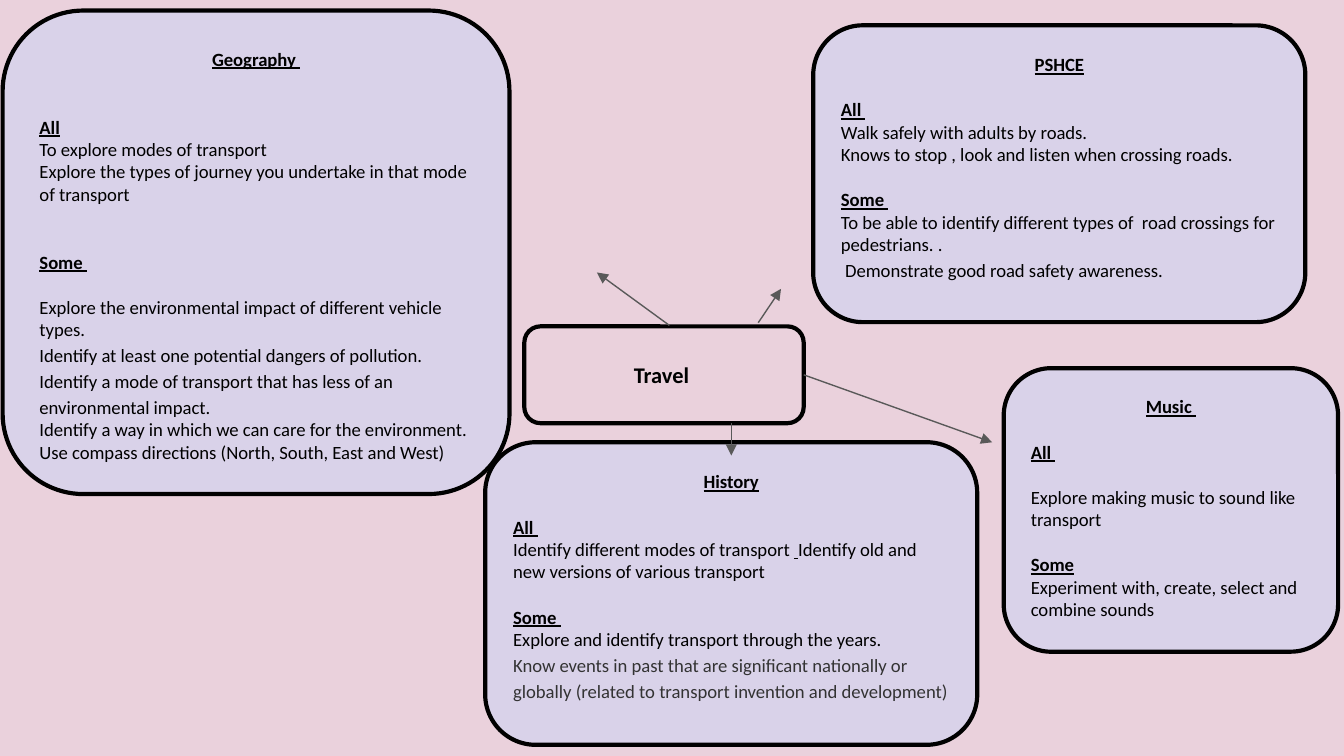
from lxml.etree import SubElement
from pptx import Presentation
from pptx.dml.color import RGBColor
from pptx.enum.shapes import MSO_CONNECTOR, MSO_SHAPE
from pptx.enum.text import MSO_ANCHOR, PP_ALIGN
from pptx.oxml.ns import qn
from pptx.util import Cm, Pt

PINK = RGBColor(0xEA, 0xD1, 0xDC)
LILAC = RGBColor(0xD9, 0xD2, 0xE9)
BLACK = RGBColor(0, 0, 0)
CHARCOAL = RGBColor(0x33, 0x33, 0x33)
GREY = RGBColor(0x59, 0x59, 0x59)
BLANK_LINE = 12.2


def add_box(page, place, fill):
    box = page.shapes.add_shape(MSO_SHAPE.ROUNDED_RECTANGLE, *map(Cm, place))
    box.adjustments[0] = 0.167
    box.shadow.inherit = False
    box.fill.solid()
    box.fill.fore_color.rgb = fill
    box.line.color.rgb = BLACK
    box.line.width = Pt(2.25)
    frame = box.text_frame
    frame.word_wrap = True
    frame.vertical_anchor = MSO_ANCHOR.TOP
    frame.margin_left = frame.margin_right = Cm(0.25)
    frame.margin_top = frame.margin_bottom = Cm(0.25)
    return box


def add_span(para, text, size=10, bold=False, underline=False, color=BLACK):
    span = para.add_run()
    span.text = text
    span.font.name = "Calibri"
    span.font.size = Pt(size)
    span.font.bold = bold
    span.font.underline = underline
    span.font.color.rgb = color


def add_para(box, gap=0, spacing=1.0):
    para = box.text_frame.add_paragraph()
    para.alignment = PP_ALIGN.LEFT
    para.space_before = Pt(gap * BLANK_LINE)
    para.line_spacing = spacing
    return para


def add_heading(box, text, gap=1):
    add_span(add_para(box, gap), text, bold=True, underline=True)


def add_lines(box, *lines, gap=0, spacing=1.0, color=BLACK):
    for index, text in enumerate(lines):
        para = add_para(box, 0 if index else gap, spacing)
        add_span(para, text, color=color)


def add_subject(page, name, place):
    box = add_box(page, place, LILAC)
    para = box.text_frame.paragraphs[0]
    para.alignment = PP_ALIGN.CENTER
    add_span(para, name, bold=True, underline=True)
    return box


def add_topic(page):
    box = add_box(page, (9.91, 6.17, 5.28, 1.83), PINK)
    box.text_frame.vertical_anchor = MSO_ANCHOR.MIDDLE
    para = box.text_frame.paragraphs[0]
    para.alignment = PP_ALIGN.CENTER
    add_span(para, "Travel ", size=12, bold=True)
    return box


def add_history(page):
    box = add_subject(page, "History", (9.17, 8.36, 9.3, 5.72))
    add_heading(box, "All ")
    para = add_para(box)
    add_span(para, "Identify different modes of transport ")
    add_span(para, " ", bold=True, underline=True)
    add_span(para, "Identify old and new versions of various transport")
    add_heading(box, "Some ")
    add_lines(box, "Explore and identify transport through the years.")
    add_lines(
        box,
        "Know events in past that are significant nationally or globally "
        "(related to transport invention and development)",
        spacing=1.15,
        color=CHARCOAL,
    )


def add_pshce(page):
    box = add_subject(page, "PSHCE", (15.37, 0.48, 9.3, 5.61))
    add_heading(box, "All ")
    add_lines(
        box,
        "Walk safely with adults by roads.",
        "Knows to stop , look and listen when crossing roads.",
    )
    add_heading(box, "Some ")
    add_lines(box, "To be able to identify different types of  road crossings for pedestrians. .")
    add_lines(box, " Demonstrate good road safety awareness.", spacing=1.15)


def add_music(page):
    box = add_subject(page, "Music ", (18.97, 6.96, 6.32, 5.36))
    add_heading(box, "All ")
    add_lines(box, "Explore making music to sound like transport", gap=1)
    add_heading(box, "Some")
    add_lines(box, "Experiment with, create, select and combine sounds")


def add_geography(page):
    box = add_subject(page, "Geography ", (0.05, 0.2, 9.58, 9.14))
    add_heading(box, "All", gap=2)
    add_lines(
        box,
        "To explore modes of transport",
        "Explore the types of journey you undertake in that mode of transport",
    )
    add_heading(box, "Some ", gap=2)
    add_lines(box, "Explore the environmental impact of different vehicle types.", gap=1)
    add_lines(
        box,
        "Identify at least one potential dangers of pollution.",
        "Identify a mode of transport that has less of an environmental impact.",
        spacing=1.15,
    )
    add_lines(
        box,
        "Identify a way in which we can care for the environment. "
        "Use compass directions (North, South, East and West)",
    )


def add_arrow(page, *ends):
    arrow = page.shapes.add_connector(MSO_CONNECTOR.STRAIGHT, *map(Cm, ends))
    arrow.line.color.rgb = GREY
    arrow.line.width = Pt(0.75)
    SubElement(arrow.line._get_or_add_ln(), qn("a:tailEnd"), type="triangle")
    SubElement(arrow._element.spPr, qn("a:effectLst"))
    return arrow


def main():
    deck = Presentation()
    deck.slide_width = Cm(25.4)
    deck.slide_height = Cm(14.29)
    page = deck.slides.add_slide(deck.slide_layouts[6])
    page.background.fill.solid()
    page.background.fill.fore_color.rgb = PINK

    topic = add_topic(page)
    add_history(page)
    add_pshce(page)
    add_music(page)
    add_geography(page)

    music_arrow = add_arrow(page, 15.19, 7.08, 18.75, 8.36)
    music_arrow.begin_connect(topic, 3)
    add_arrow(page, 14.33, 6.1, 14.76, 5.46)
    add_arrow(page, 12.65, 6.15, 11.28, 5.15)
    add_arrow(page, 13.82, 8, 13.82, 8.61)
    deck.save("out.pptx")


if __name__ == "__main__":
    main()
